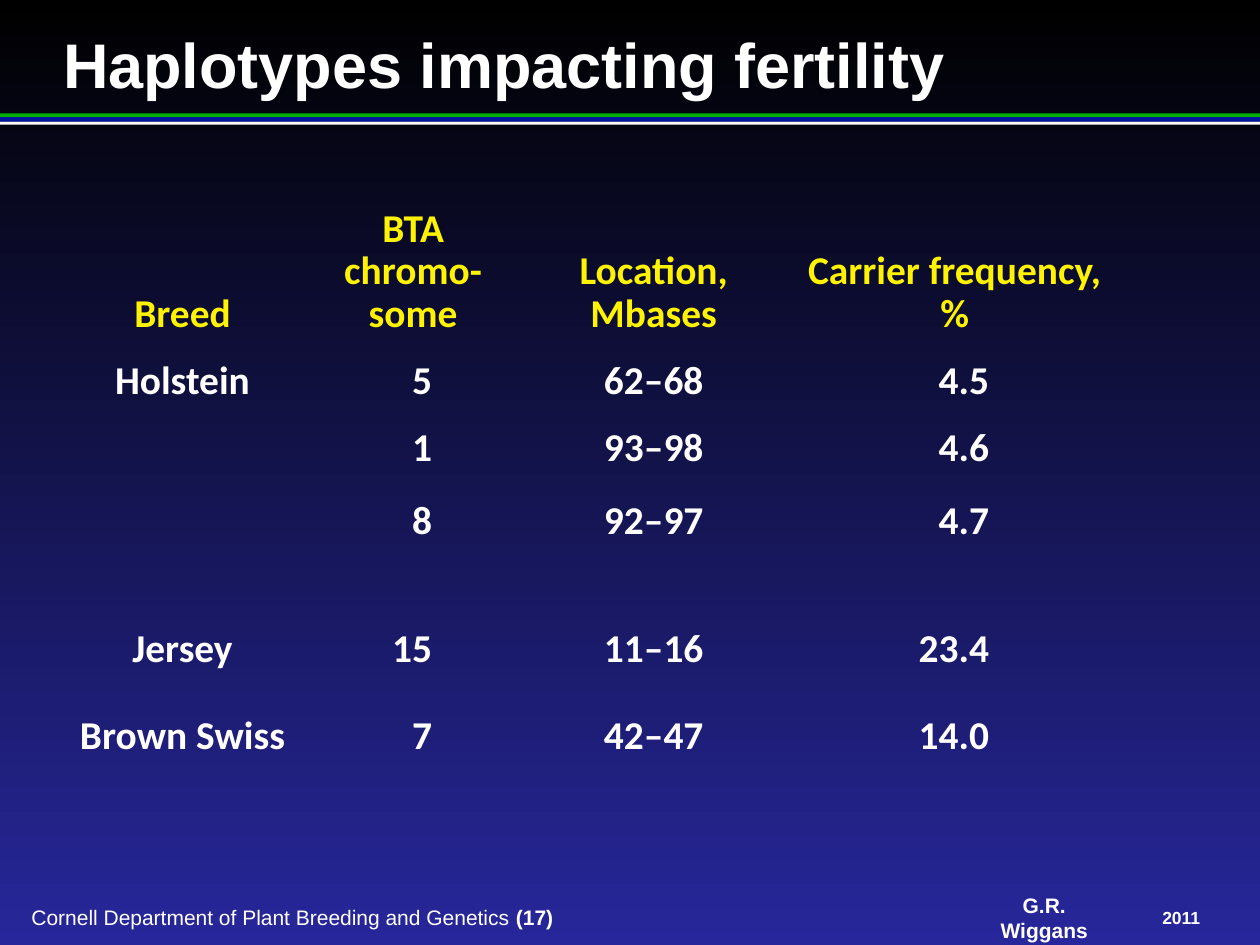
from pptx import Presentation
from pptx.dml.color import RGBColor
from pptx.enum import shapes, text
from pptx.util import Pt

HUES = {"black": "000000", "indigo": "27279B", "white": "FFFFFF",
        "yellow": "FFF301", "green": "01AF00", "blue": "001799"}
LEFT, MID, RIGHT = text.PP_ALIGN.LEFT, text.PP_ALIGN.CENTER, text.PP_ALIGN.RIGHT


def hue(name):
    return RGBColor.from_string(HUES[name])


def write(frame, words, size=12, font="Arial", color="white", bold=True,
          align=LEFT, line=None):
    """Add a run to the first paragraph of a text frame."""
    para = frame.paragraphs[0]
    para.alignment = align
    if line:
        para.line_spacing = Pt(line)
    run = para.add_run()
    run.text = words
    run.font.size, run.font.name, run.font.bold = Pt(size), font, bold
    run.font.color.rgb = hue(color)


deck = Presentation()
deck.slide_width, deck.slide_height = Pt(720), Pt(540)
slide = deck.slides.add_slide(deck.slide_layouts[5])

# Background
fill = slide.background.fill
fill.gradient()
fill.gradient_angle = 270
for stop, name, pos in zip(fill.gradient_stops, ("black", "indigo"), (0, 1)):
    stop.color.rgb = hue(name)
    stop.position = pos

# Bands under the title
for name, top, high in (("green", 64.8, 2.2), ("white", 69.4, 1.8),
                        ("blue", 67, 2.6)):
    band = slide.shapes.add_shape(shapes.MSO_SHAPE.RECTANGLE,
                                  0, Pt(top), Pt(720), Pt(high))
    band.shadow.inherit = False
    band.fill.solid()
    band.fill.fore_color.rgb = hue(name)
    band.line.fill.background()

# Title
title = slide.shapes.title
title.left, title.top, title.width, title.height = Pt(36), Pt(14.4), Pt(648), Pt(43.2)
frame = title.text_frame
frame.margin_left = frame.margin_right = frame.margin_top = frame.margin_bottom = 0
frame.vertical_anchor = text.MSO_ANCHOR.MIDDLE
write(frame, "Haplotypes impacting fertility", size=36)

# Footer: left, width, alignment, runs of (words, size, bold)
feet = (
    (18, 376, LEFT, (("Cornell Department of Plant Breeding and Genetics ", 12, False),
                     ("(17)", 12, True))),
    (558.7, 76, MID, (("G.R. Wiggans", 12, True),)),
    (653, 44, MID, (("2011", 10, True),)),
)
for left, wide, align, runs in feet:
    box = slide.shapes.add_textbox(Pt(left), Pt(517), Pt(wide), Pt(14.4))
    frame = box.text_frame
    frame.word_wrap = True
    frame.margin_left = frame.margin_right = frame.margin_top = frame.margin_bottom = 0
    frame.vertical_anchor = text.MSO_ANCHOR.MIDDLE
    for words, size, bold in runs:
        write(frame, words, size=size, bold=bold, align=align)

# Table
rows = (
    ("Breed", "BTA chromo-some", "Location, Mbases", "Carrier frequency, %"),
    ("Holstein", "5", "62–68", "4.5"),
    ("", "1", "93–98", "4.6"),
    ("", "8", "92–97", "4.7"),
    ("Jersey", "15", "11–16", "23.4"),
    ("Brown Swiss", "7", "42–47", "14.0"),
)
wides = (148.3, 115.2, 159.8, 184.3)
highs = (94.3, 38.5, 41.7, 73.4, 49.7, 49.7)
pads = {1: 46.8, 3: 72.5}  # right insets that line up the digits

shape = slide.shapes.add_table(len(rows), len(wides), Pt(30.2), Pt(102.2),
                               Pt(sum(wides)), Pt(sum(highs)))
table = shape.table
table.first_row = table.horz_banding = False
table._tbl.tblPr[0].text = "{2D5ABB26-0587-4C30-8999-92F81FD0307C}"  # no style, no grid
for col, wide in zip(table.columns, wides):
    col.width = Pt(wide)
for r, (row, high) in enumerate(zip(rows, highs)):
    table.rows[r].height = Pt(high)
    for c, words in enumerate(row):
        cell = table.cell(r, c)
        cell.fill.background()
        if r == 0:
            cell.vertical_anchor = text.MSO_ANCHOR.BOTTOM
            write(cell.text_frame, words, size=22.5, font="Calibri",
                  color="yellow", align=MID, line=24)
            continue
        cell.margin_top = Pt(7.2)
        cell.margin_bottom = Pt(3.6 if r == 1 else 7.2)
        if c in pads:
            cell.margin_right = Pt(pads[c])
        if words:
            write(cell.text_frame, words, size=22.5, font="Calibri",
                  align=RIGHT if c in pads else MID)

deck.save("out.pptx")
